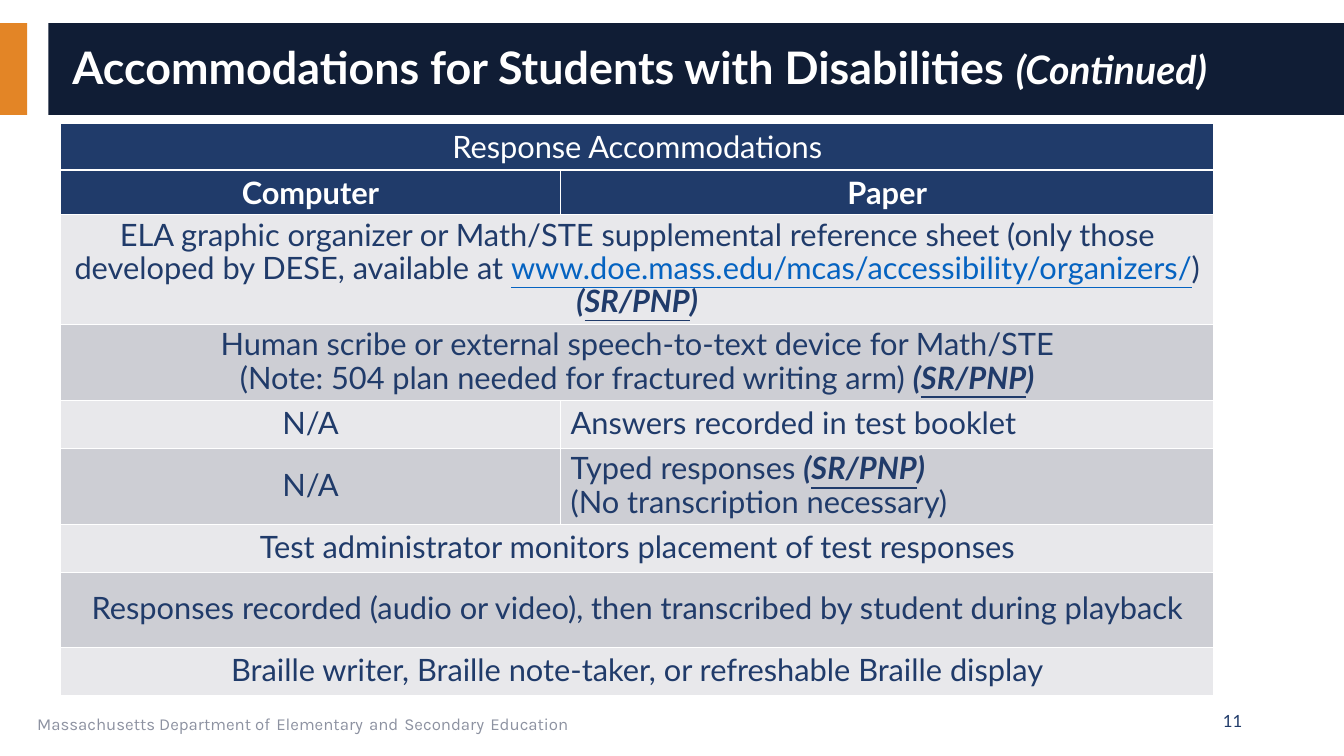
from lxml.etree import SubElement
from pptx import Presentation
from pptx.dml.color import RGBColor as RGB
from pptx.enum.shapes import MSO_SHAPE as SHAPE
from pptx.enum.text import MSO_ANCHOR as ANCHOR, PP_ALIGN as ALIGN
from pptx.oxml.ns import qn
from pptx.util import Inches, Pt

COLORS = {
    "orange": "E38526", "dark": "101D35", "navy": "203B6A", "white": "FFFFFF",
    "light": "E8E8EB", "mid": "CDCED4", "gray": "8D92A1", "link": "0563C1",
}


def run(text, flags="", **style):
    return text, flags, style


class SlideBuilder:
    font, size, color = "Lato", 22, "navy"

    def __init__(self, slide):
        self.s = slide

    def rgb(self, name):
        return RGB.from_string(COLORS[name])

    def rect(self, x, y, w, h, color):
        sp = self.s.shapes.add_shape(
            SHAPE.RECTANGLE, Inches(x), Inches(y), Inches(w), Inches(h))
        sp.shadow.inherit = False
        sp.fill.solid()
        sp.fill.fore_color.rgb = self.rgb(color)
        sp.line.fill.background()

    def add_runs(self, tf, paragraphs, align=ALIGN.LEFT, spacing=None, **base):
        for i, runs in enumerate(paragraphs):
            p = tf.add_paragraph() if i else tf.paragraphs[0]
            p.alignment = align
            if spacing:
                p.line_spacing = spacing
            for text, flags, own in runs:
                style = {**base, **own}
                r = p.add_run()
                r.text = text
                f = r.font
                f.name = style.get("font", self.font)
                f.size = Pt(style.get("size", self.size))
                f.color.rgb = self.rgb(style.get("color", self.color))
                f.bold = "b" in flags
                f.italic = "i" in flags
                f.underline = "u" in flags

    def text(self, x, y, w, h, runs, anchor=ANCHOR.MIDDLE, **style):
        tf = self.s.shapes.add_textbox(
            Inches(x), Inches(y), Inches(w), Inches(h)).text_frame
        tf.word_wrap = True
        tf.vertical_anchor = anchor
        self.add_runs(tf, [runs], **style)

    def border(self, cell, color="white", width=1):
        tcPr = cell._tc.get_or_add_tcPr()
        for side in ("lnL", "lnR", "lnT", "lnB"):
            ln = SubElement(tcPr, qn(f"a:{side}"), w=str(Pt(width)))
            fill = SubElement(ln, qn("a:solidFill"))
            SubElement(fill, qn("a:srgbClr"), val=COLORS[color])

    def table(self, x, y, widths, rows):
        heights = [height for height, _ in rows]
        tbl = self.s.shapes.add_table(
            len(rows), len(widths), Inches(x), Inches(y),
            Inches(sum(widths)), Inches(sum(heights))).table
        tbl.first_row = tbl.horz_banding = False
        for col, width in zip(tbl.columns, widths):
            col.width = Inches(width)
        for i, (height, cells) in enumerate(rows):
            tbl.rows[i].height = Inches(height)
            header = i < 2
            fill = "navy" if header else ("light", "mid")[i % 2]
            for j in range(len(widths)):
                cell = tbl.cell(i, j)
                self.border(cell)
                cell.fill.solid()
                cell.fill.fore_color.rgb = self.rgb(fill)
            if len(cells) == 1:
                tbl.cell(i, 0).merge(tbl.cell(i, len(widths) - 1))
            for j, paragraphs in enumerate(cells):
                cell = tbl.cell(i, j)
                cell.vertical_anchor = ANCHOR.MIDDLE if i else ANCHOR.TOP
                if i == 1:
                    cell.margin_left = cell.margin_right = Inches(0.06)
                    cell.margin_top = cell.margin_bottom = 0
                self.add_runs(
                    cell.text_frame, paragraphs,
                    align=ALIGN.CENTER if header or j == 0 else ALIGN.LEFT,
                    spacing=None if header else 0.9,
                    color="white" if header else "navy")


def plain(text, flags=""):
    return [[run(text, flags)]]


SR_PNP = [run("(", "bi"), run("SR/PNP", "biu"), run(")", "bi")]

ROWS = [
    (0.46, [plain("Response Accommodations")]),
    (0.44, [plain("Computer", "b"), plain("Paper", "b")]),
    (0.99, [[[
        run("ELA graphic organizer or Math/STE supplemental reference sheet "
            "(only those developed by DESE, available at "),
        run("www.doe.mass.edu/mcas/accessibility/organizers/", "u", color="link"),
        run(") "), *SR_PNP]]]),
    (0.75, [[
        [run("Human scribe or external speech-to-text device for Math/STE")],
        [run("(Note: 504 plan needed for fractured writing arm) "), *SR_PNP]]]),
    (0.47, [plain("N/A"), plain("Answers recorded in test booklet")]),
    (0.75, [plain("N/A"), [
        [run("Typed responses "), *SR_PNP],
        [run("(No transcription necessary)")]]]),
    (0.47, [plain("Test administrator monitors placement of test responses")]),
    (0.75, [plain("Responses recorded (audio or video), then transcribed "
                  "by student during playback")]),
    (0.47, [plain("Braille writer, Braille note-taker, "
                  "or refreshable Braille display")]),
]


def main():
    prs = Presentation()
    prs.slide_width, prs.slide_height = Inches(13.33), Inches(7.5)
    b = SlideBuilder(prs.slides.add_slide(prs.slide_layouts[6]))

    b.rect(0, 0.23, 0.27, 0.91, "orange")
    b.rect(0.48, 0.23, 12.85, 0.91, "dark")
    b.text(0.62, 0.32, 12.44, 0.74, [
        run("Accommodations for Students with Disabilities ", "b", size=32),
        run("(Continued)", "bi", size=28)], color="white", spacing=0.9)

    b.table(0.6, 1.22, [4.96, 6.48], ROWS)

    footer = [run("Massachusetts Department of")]
    for word in ("Elementary", "and", "Secondary", "Education"):
        footer += [run(" ", size=18), run(word)]
    b.text(0.27, 6.95, 8.44, 0.4, footer, anchor=ANCHOR.TOP,
           font="Karla", size=12, color="gray")
    b.text(9.42, 6.95, 3, 0.4, [run("11")], align=ALIGN.RIGHT, size=12)

    prs.save("out.pptx")


if __name__ == "__main__":
    main()
